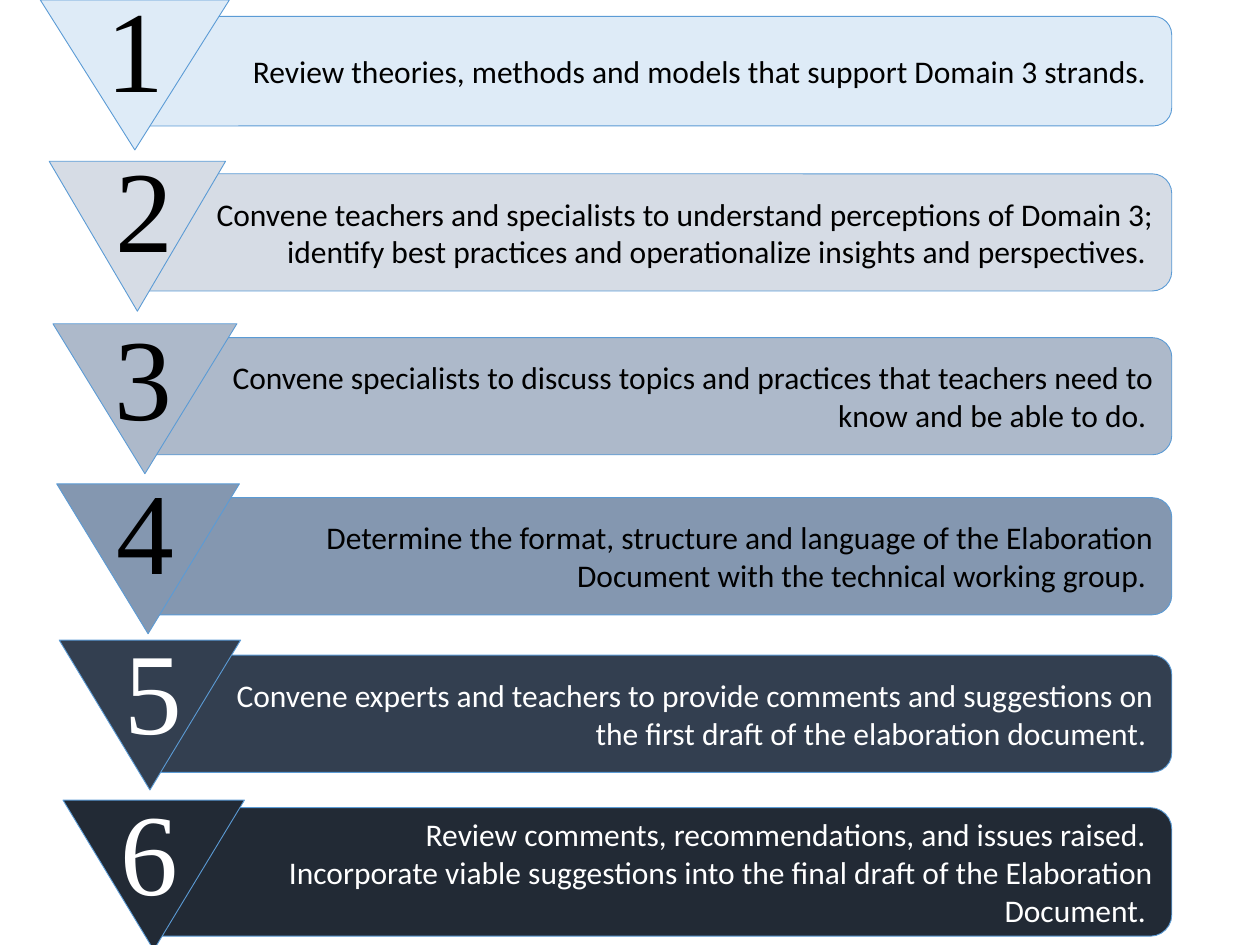
from pptx import Presentation
from pptx.dml.color import RGBColor
from pptx.enum.shapes import MSO_SHAPE
from pptx.enum.text import MSO_ANCHOR, MSO_AUTO_SIZE, PP_ALIGN
from pptx.util import Inches, Pt

BLACK = RGBColor(0x00, 0x00, 0x00)
WHITE = RGBColor(0xFF, 0xFF, 0xFF)
OUTLINE = RGBColor(0x5B, 0x9B, 0xD5)
ICE = RGBColor(0xDE, 0xEB, 0xF7)
MIST = RGBColor(0xD6, 0xDC, 0xE5)
STEEL = RGBColor(0xAD, 0xB9, 0xCA)
SLATE = RGBColor(0x84, 0x97, 0xB0)
NAVY = RGBColor(0x33, 0x3F, 0x50)
INK = RGBColor(0x22, 0x2A, 0x35)

BAR_RIGHT = 9.3
TRIANGLE_HEIGHT = 1.19
NUMBER_SIZE = (0.92, 1.21)

# fill, text colour, bar (left, top, height), triangle (left, top, width),
# number (left, top), paragraphs
STEPS = [
    (ICE, BLACK, (1.03, 0.13, 0.87), (0.32, 0, 1.5), (0.75, -0.23),
     ["Review theories, methods and models that support Domain 3 strands. "]),
    (MIST, BLACK, (0.97, 1.38, 0.93), (0.39, 1.28, 1.4), (0.82, 1.04),
     ["Convene teachers and specialists to understand perceptions of Domain 3; "
      "identify best practices and operationalize insights and perspectives. "]),
    (STEEL, BLACK, (1.08, 2.68, 0.93), (0.42, 2.57, 1.46), (0.81, 2.37),
     ["Convene specialists to discuss topics and practices that teachers need to "
      "know and be able to do. "]),
    (SLATE, BLACK, (1.03, 3.95, 0.93), (0.45, 3.84, 1.45), (0.83, 3.59),
     ["Determine the format, structure and language of the Elaboration "
      "Document with the technical working group. "]),
    (NAVY, WHITE, (1.11, 5.2, 0.93), (0.47, 5.08, 1.44), (0.89, 4.86),
     ["Convene experts and teachers to provide comments and suggestions on "
      "the first draft of the elaboration document. "]),
    (INK, WHITE, (1.12, 6.41, 1.02), (0.5, 6.35, 1.44), (0.86, 6.14),
     ["Review comments, recommendations, and issues raised. ",
      "Incorporate viable suggestions into the final draft of the Elaboration "
      "Document. "]),
]


def write_text(frame, paragraphs, *, font, size, color, align=PP_ALIGN.LEFT):
    frame.word_wrap = True
    for index, text in enumerate(paragraphs):
        para = frame.add_paragraph() if index else frame.paragraphs[0]
        para.alignment = align
        span = para.add_run()
        span.text = text
        span.font.name = font
        span.font.size = Pt(size)
        span.font.color.rgb = color


def add_outlined_shape(page, kind, box, fill):
    shape = page.shapes.add_shape(kind, *map(Inches, box))
    shape.shadow.inherit = False
    shape.fill.solid()
    shape.fill.fore_color.rgb = fill
    shape.line.color.rgb = OUTLINE
    shape.line.width = Pt(0.5)
    return shape


def add_bar(page, box, fill, color, paragraphs):
    bar = add_outlined_shape(page, MSO_SHAPE.ROUNDED_RECTANGLE, box, fill)
    frame = bar.text_frame
    frame.vertical_anchor = MSO_ANCHOR.MIDDLE
    frame.margin_left = Inches(0.6)  # keeps the text clear of the triangle
    write_text(frame, paragraphs, font="Calibri", size=18, color=color,
               align=PP_ALIGN.RIGHT)


def add_number(page, box, number, color):
    label = page.shapes.add_textbox(*map(Inches, box))
    write_text(label.text_frame, [str(number)], font="Times New Roman",
               size=66, color=color)
    label.text_frame.auto_size = MSO_AUTO_SIZE.SHAPE_TO_FIT_TEXT


def add_step(page, number, fill, color, bar, triangle, label, paragraphs):
    left, top, height = bar
    add_bar(page, (left, top, BAR_RIGHT - left, height), fill, color, paragraphs)
    pointer = add_outlined_shape(page, MSO_SHAPE.ISOSCELES_TRIANGLE,
                                 (*triangle, TRIANGLE_HEIGHT), fill)
    pointer.rotation = 180
    add_number(page, (*label, *NUMBER_SIZE), number, color)


def main():
    deck = Presentation()
    deck.slide_width = Inches(10)
    deck.slide_height = Inches(7.5)
    page = deck.slides.add_slide(deck.slide_layouts[6])
    for number, step in enumerate(STEPS, start=1):
        add_step(page, number, *step)
    deck.save("out.pptx")


if __name__ == "__main__":
    main()
